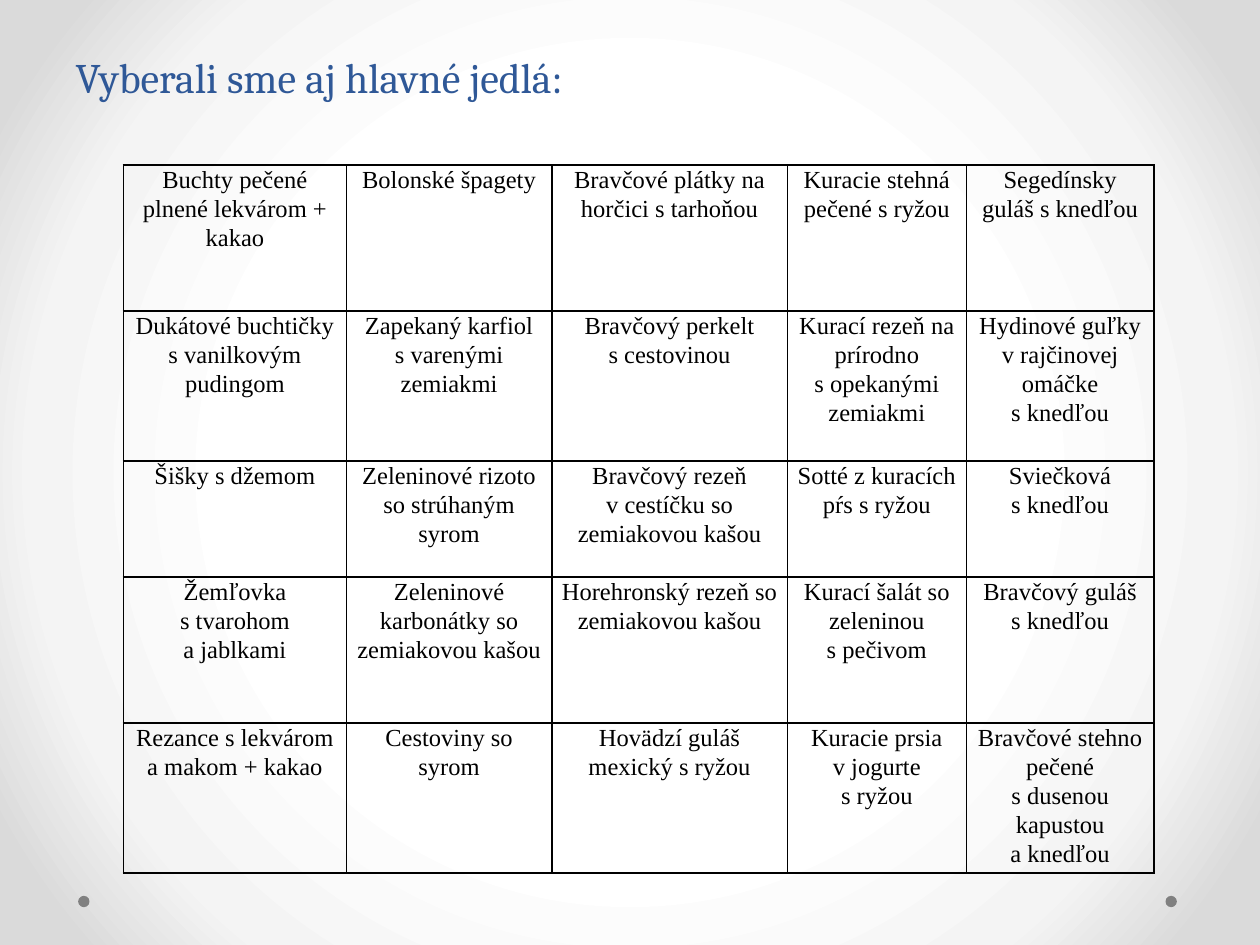
from pptx import Presentation
from pptx.dml.color import RGBColor
from pptx.enum.shapes import MSO_SHAPE
from pptx.enum.text import MSO_ANCHOR, MSO_AUTO_SIZE, PP_ALIGN
from pptx.oxml import parse_xml
from pptx.oxml.ns import nsdecls, qn
from pptx.util import Inches, Pt

TITLE = "Vyberali sme aj hlavné jedlá:"
MEALS = [
    ["Buchty pečené plnené lekvárom + kakao", "Bolonské špagety",
     "Bravčové plátky na horčici s tarhoňou", "Kuracie stehná pečené s ryžou",
     "Segedínsky guláš s knedľou"],
    ["Dukátové buchtičky s vanilkovým pudingom", "Zapekaný karfiol s varenými zemiakmi",
     "Bravčový perkelt s cestovinou", "Kurací rezeň na prírodno s opekanými zemiakmi",
     "Hydinové guľky v rajčinovej omáčke s knedľou"],
    ["Šišky s džemom", "Zeleninové rizoto so strúhaným syrom",
     "Bravčový rezeň v cestíčku so zemiakovou kašou", "Sotté z kuracích pŕs s ryžou",
     "Sviečková s knedľou"],
    ["Žemľovka s tvarohom a jablkami", "Zeleninové karbonátky so zemiakovou kašou",
     "Horehronský rezeň so zemiakovou kašou", "Kurací šalát so zeleninou s pečivom",
     "Bravčový guláš s knedľou"],
    ["Rezance s lekvárom a makom + kakao", "Cestoviny so syrom",
     "Hovädzí guláš mexický s ryžou", "Kuracie prsia v jogurte s ryžou",
     "Bravčové stehno pečené s dusenou kapustou a knedľou"],
]
COL_WIDTHS = [1.77, 1.63, 1.87, 1.42, 1.49]
ROW_HEIGHTS = [1.16, 1.19, 0.92, 1.16, 1.19]
GRADIENT = [(50, "FFFFFF"), (76, "F4F4F4"), (92, "DADADA")]
DOT_LEFTS = [0.62, 9.25]
NBSP = chr(160)


def color(value):
    return RGBColor.from_string(value)


def tie_prepositions(text):
    for letter in "svaz":
        text = text.replace(f" {letter} ", f" {letter}{NBSP}")
    return text


def format_run(p, font, size, value):
    r = p.runs[0]
    r.font.name = font
    r.font.size = Pt(size)
    r.font.color.rgb = color(value)


def set_background(slide):
    slide.background.fill.gradient()
    old = slide.element.find(".//" + qn("a:gradFill"))
    stops = "".join(f'<a:gs pos="{pos * 1000}"><a:srgbClr val="{value}"/></a:gs>'
                    for pos, value in GRADIENT)
    old.getparent().replace(old, parse_xml(
        f'<a:gradFill {nsdecls("a")} rotWithShape="1"><a:gsLst>{stops}</a:gsLst>'
        '<a:path path="circle"><a:fillToRect l="50000" t="50000" r="50000" b="50000"/>'
        '</a:path></a:gradFill>'))


def add_borders(cell):
    tc_pr = cell._tc.get_or_add_tcPr()
    for i, side in enumerate("LRTB"):
        tc_pr.insert(i, parse_xml(
            f'<a:ln{side} {nsdecls("a")} w="12700"><a:solidFill>'
            f'<a:srgbClr val="000000"/></a:solidFill></a:ln{side}>'))


def fill_cell(cell, text):
    cell.fill.background()
    cell.margin_left = cell.margin_right = Inches(0.07)
    cell.margin_top = cell.margin_bottom = 0
    p = cell.text_frame.paragraphs[0]
    p.text = tie_prepositions(text)
    p.alignment = PP_ALIGN.CENTER
    p.line_spacing = 1.07
    p.space_before = Pt(12)
    format_run(p, "Times New Roman", 14, "000000")
    add_borders(cell)


def main():
    prs = Presentation()
    prs.slide_width, prs.slide_height = Inches(10), Inches(7.5)
    slide = prs.slides.add_slide(prs.slide_layouts[5])
    set_background(slide)

    for left in DOT_LEFTS:
        dot = slide.shapes.add_shape(MSO_SHAPE.OVAL, Inches(left), Inches(7.11),
                                     Inches(0.09), Inches(0.09))
        dot.shadow.inherit = False
        dot.fill.solid()
        dot.fill.fore_color.rgb = color("808080")
        dot.line.fill.background()

    title = slide.shapes.title
    title.left, title.top = Inches(0.5), Inches(0.36)
    title.width, title.height = Inches(9), Inches(0.8)
    tf = title.text_frame
    tf.text = TITLE
    tf.auto_size = MSO_AUTO_SIZE.NONE
    tf.vertical_anchor = MSO_ANCHOR.TOP
    tf.paragraphs[0].alignment = PP_ALIGN.LEFT
    format_run(tf.paragraphs[0], "Cambria", 24, "2F5897")

    table = slide.shapes.add_table(
        len(ROW_HEIGHTS), len(COL_WIDTHS), Inches(0.98), Inches(1.31),
        Inches(sum(COL_WIDTHS)), Inches(sum(ROW_HEIGHTS))).table
    table.first_row = table.horz_banding = False
    for column, width in zip(table.columns, COL_WIDTHS):
        column.width = Inches(width)
    for row, height, meals in zip(table.rows, ROW_HEIGHTS, MEALS):
        row.height = Inches(height)
        for cell, meal in zip(row.cells, meals):
            fill_cell(cell, meal)

    prs.save("out.pptx")


if __name__ == "__main__":
    main()
